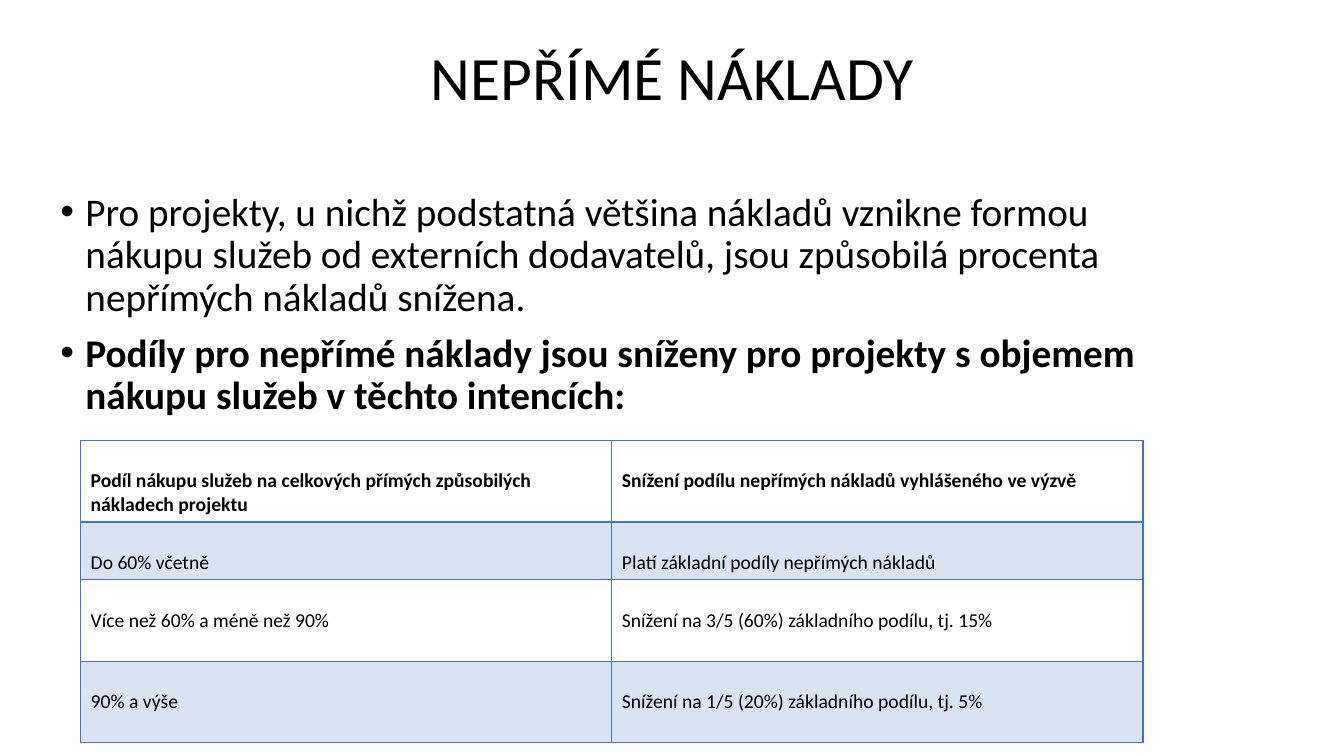
from dataclasses import dataclass

from lxml.etree import SubElement
from pptx import Presentation
from pptx.dml.color import RGBColor
from pptx.enum.text import MSO_ANCHOR as Anchor, PP_ALIGN as Align
from pptx.oxml.ns import qn
from pptx.slide import Slide
from pptx.table import _Cell as Cell
from pptx.text.text import TextFrame, _Paragraph as Paragraph
from pptx.util import Pt


@dataclass(frozen=True)
class Theme:
    font: str = "Calibri"
    ink: str = "000000"
    accent: str = "4472C4"
    band: str = "DAE3F3"
    title: float = 44
    body: float = 28
    table: float = 14


@dataclass(frozen=True)
class Area:
    left: float
    top: float
    width: float
    height: float


@dataclass(frozen=True)
class Point:
    text: str
    bold: bool
    before: float


@dataclass(frozen=True)
class Row:
    share: str
    reduction: str
    height: float
    header: bool = False
    banded: bool = False


THEME = Theme()
TITLE_AREA = Area(105.84, 36.72, 748.8, 41.76)
BODY_AREA = Area(36, 134, 818.64, 341.2)
TABLE_AREA = Area(57.6, 314.4, 758.88, 216.3)
HANGING = 18
CELL_TOP = 20.7

POINTS = (
    Point("Pro projekty, u nichž podstatná většina nákladů vznikne formou nákupu služeb "
          "od externích dodavatelů, jsou způsobilá procenta nepřímých nákladů snížena.",
          False, 0),
    Point("Podíly pro nepřímé náklady jsou sníženy pro projekty s objemem nákupu služeb "
          "v těchto intencích:", True, 10),
)
ROWS = (
    Row("Podíl nákupu služeb na celkových přímých způsobilých nákladech projektu",
        "Snížení podílu nepřímých nákladů vyhlášeného ve výzvě", 58.3, header=True),
    Row("Do 60% včetně", "Platí základní podíly nepřímých nákladů", 41.4, banded=True),
    Row("Více než 60% a méně než 90%",
        "Snížení na 3/5 (60%) základního podílu, tj. 15%", 58.3),
    Row("90% a výše", "Snížení na 1/5 (20%) základního podílu, tj. 5%", 58.3, banded=True),
)


def write(para: Paragraph, text: str, *, size: float, bold: bool = False,
          align: Align = Align.LEFT, spacing: float = 1, before: float = 0) -> None:
    para.alignment = align
    para.line_spacing = spacing
    para.space_before = Pt(before)
    span = para.add_run()
    span.text = text
    span.font.name = THEME.font
    span.font.size = Pt(size)
    span.font.bold = bold
    span.font.color.rgb = RGBColor.from_string(THEME.ink)


def add_text_frame(page: Slide, area: Area, anchor: Anchor) -> TextFrame:
    box = page.shapes.add_textbox(Pt(area.left), Pt(area.top), Pt(area.width), Pt(area.height))
    frame = box.text_frame
    frame.word_wrap = True
    frame.vertical_anchor = anchor
    return frame


def add_bullet(para: Paragraph) -> None:
    properties = para._p.get_or_add_pPr()
    properties.set("marL", str(Pt(HANGING)))
    properties.set("indent", str(-Pt(HANGING)))
    SubElement(properties, qn("a:buFont")).set("typeface", "Arial")
    SubElement(properties, qn("a:buChar")).set("char", "•")


def add_border(cell: Cell, side: str, width: float) -> None:
    line = SubElement(cell._tc.get_or_add_tcPr(), qn(f"a:ln{side}"), w=str(Pt(width)))
    fill = SubElement(line, qn("a:solidFill"))
    SubElement(fill, qn("a:srgbClr"), val=THEME.accent)


def format_cell(cell: Cell, text: str, row: Row, below_header: bool) -> None:
    cell.margin_top = Pt(CELL_TOP)
    cell.vertical_anchor = Anchor.TOP
    write(cell.text_frame.paragraphs[0], text, size=THEME.table, bold=row.header)
    widths = {"L": 1, "R": 1, "T": 2 if below_header else 1, "B": 2 if row.header else 1}
    for side, width in widths.items():
        add_border(cell, side, width)
    if row.banded:
        cell.fill.solid()
        cell.fill.fore_color.rgb = RGBColor.from_string(THEME.band)
    else:
        cell.fill.background()


def add_share_table(page: Slide) -> None:
    area = TABLE_AREA
    table = page.shapes.add_table(len(ROWS), 2, Pt(area.left), Pt(area.top),
                                  Pt(area.width), Pt(area.height)).table
    table.first_row = False
    table.horz_banding = False
    for index, row in enumerate(ROWS):
        table.rows[index].height = Pt(row.height)
        for column, text in enumerate((row.share, row.reduction)):
            format_cell(table.cell(index, column), text, row, index == 1)


def main() -> None:
    deck = Presentation()
    deck.slide_width = Pt(960)
    deck.slide_height = Pt(540)
    page = deck.slides.add_slide(deck.slide_layouts[6])

    title = add_text_frame(page, TITLE_AREA, Anchor.MIDDLE)
    write(title.paragraphs[0], "NEPŘÍMÉ NÁKLADY", size=THEME.title,
          align=Align.CENTER, spacing=0.9)

    body = add_text_frame(page, BODY_AREA, Anchor.TOP)
    for index, point in enumerate(POINTS):
        para = body.add_paragraph() if index else body.paragraphs[0]
        write(para, point.text, size=THEME.body, bold=point.bold,
              spacing=0.9, before=point.before)
        add_bullet(para)

    add_share_table(page)
    deck.save("out.pptx")


if __name__ == "__main__":
    main()
